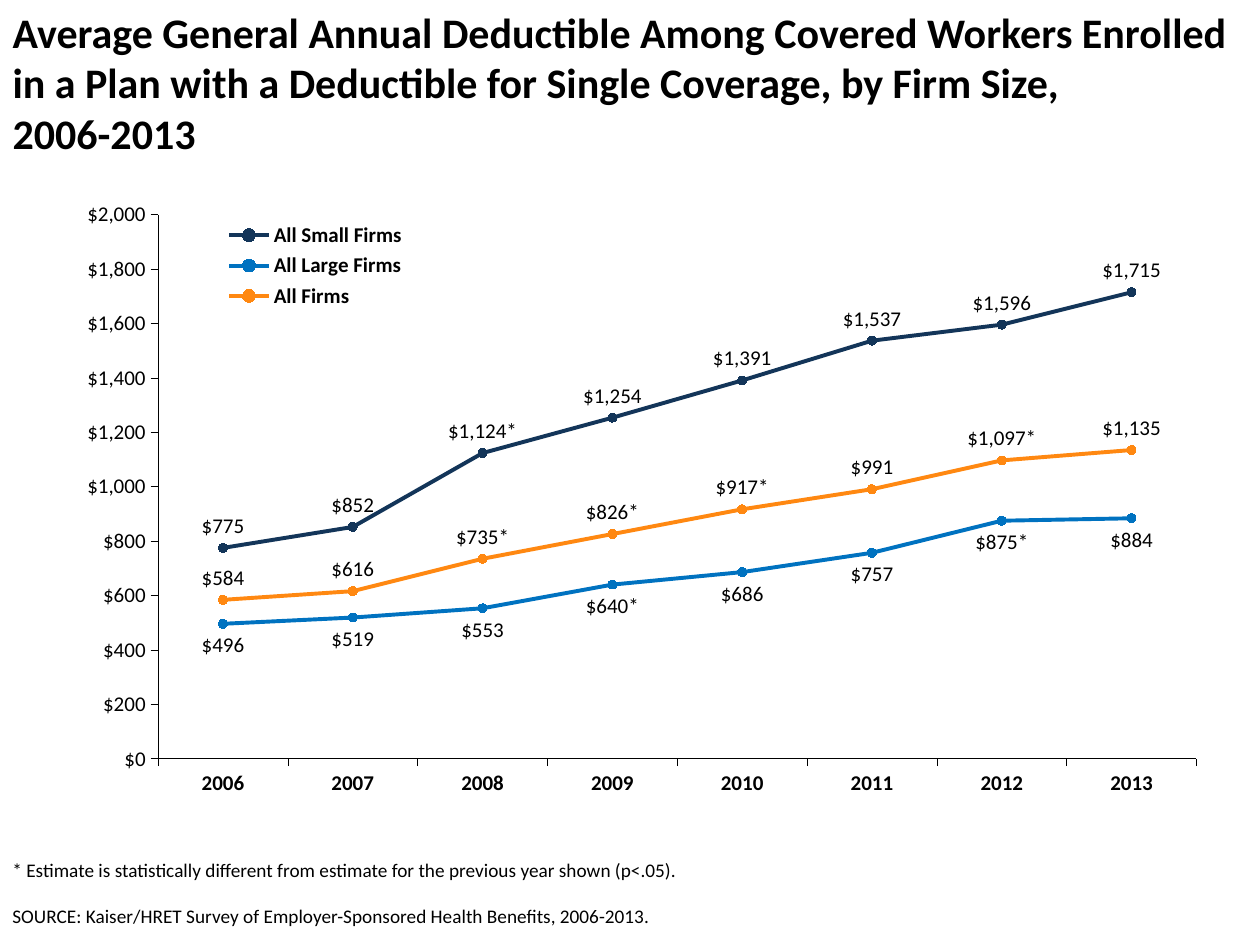
from lxml.etree import SubElement
from pptx import Presentation
from pptx.chart.data import CategoryChartData
from pptx.dml.color import RGBColor
from pptx.enum.chart import (XL_CHART_TYPE, XL_LABEL_POSITION as LabelPos,
                             XL_LEGEND_POSITION, XL_MARKER_STYLE, XL_TICK_MARK)
from pptx.enum.text import MSO_ANCHOR, MSO_AUTO_SIZE, PP_ALIGN
from pptx.oxml.ns import qn
from pptx.util import Inches, Pt

TITLE = ["Average General Annual Deductible Among Covered Workers Enrolled "
         "in a Plan with a Deductible for Single Coverage, by Firm Size,",
         "2006-2013"]
NOTES = ["* Estimate is statistically different from estimate for the previous year shown (p<.05).",
         "SOURCE: Kaiser/HRET Survey of Employer-Sponsored Health Benefits, 2006-2013."]
YEARS = [str(year) for year in range(2006, 2014)]
FIRMS = [
    dict(name="All Small Firms", color="133559", labels=LabelPos.ABOVE, starred=["2008"],
         deductibles=[775, 852, 1124, 1254, 1391, 1537, 1596, 1715]),
    dict(name="All Large Firms", color="0072C0", labels=LabelPos.BELOW, starred=["2009", "2012"],
         deductibles=[496, 519, 553, 640, 686, 757, 875, 884]),
    dict(name="All Firms", color="FF8811", labels=LabelPos.ABOVE,
         starred=["2008", "2009", "2010", "2012"],
         deductibles=[584, 616, 735, 826, 917, 991, 1097, 1135]),
]
THEME = dict(font="Calibri", ink="000000", title=24, chart=12, note=11,
             series_line=2.25, axis_line=0.3, marker=5)
DOLLARS = '"$"#,##0'


def style_font(font, size, bold=False):
    font.name, font.size, font.bold = THEME["font"], Pt(size), bold
    font.color.rgb = RGBColor.from_string(THEME["ink"])


def write_paragraphs(frame, lines, size, bold=False, gap=0):
    frame.word_wrap = True
    frame.auto_size = MSO_AUTO_SIZE.NONE
    frame.vertical_anchor = MSO_ANCHOR.TOP
    for i, line in enumerate(lines):
        paragraph = frame.add_paragraph() if i else frame.paragraphs[0]
        paragraph.text = line
        paragraph.alignment = PP_ALIGN.LEFT
        paragraph.space_before = Pt(gap if i else 0)
        style_font(paragraph.font, size, bold)


def place_part(part, index, settings):
    """Give a chart part a manual layout, as its child at the given index."""
    for old in part.findall(qn("c:layout")):
        part.remove(old)
    layout = SubElement(part, qn("c:layout"))
    part.insert(index, layout)
    manual = SubElement(layout, qn("c:manualLayout"))
    for tag, value in settings.items():
        SubElement(manual, qn(f"c:{tag}")).set("val", str(value))


def style_axis(axis, bold=False):
    axis.has_major_gridlines = False
    axis.major_tick_mark = XL_TICK_MARK.OUTSIDE
    axis.minor_tick_mark = XL_TICK_MARK.NONE
    axis.format.line.width = Pt(THEME["axis_line"])
    axis.format.line.color.rgb = RGBColor.from_string(THEME["ink"])
    style_font(axis.tick_labels.font, THEME["chart"], bold)


def style_series(series, firm):
    color = RGBColor.from_string(firm["color"])
    series.smooth = False
    series.format.line.color.rgb = color
    series.format.line.width = Pt(THEME["series_line"])
    marker = series.marker
    marker.style, marker.size = XL_MARKER_STYLE.CIRCLE, THEME["marker"]
    marker.format.fill.solid()
    marker.format.fill.fore_color.rgb = color
    marker.format.line.color.rgb = color

    labels = series.data_labels
    labels.show_value = True
    labels.position = firm["labels"]
    labels.number_format, labels.number_format_is_linked = DOLLARS, False
    style_font(labels.font, THEME["chart"])
    for year in firm["starred"]:
        i = YEARS.index(year)
        label = series.points[i].data_label
        paragraph = label.text_frame.paragraphs[0]
        run = paragraph.add_run()
        run.text = f"${firm['deductibles'][i]:,}*"
        style_font(run.font, THEME["chart"])
        label.position = firm["labels"]


def add_deductible_chart(slide):
    data = CategoryChartData(number_format=DOLLARS)
    data.categories = YEARS
    for firm in FIRMS:
        data.add_series(firm["name"], firm["deductibles"])
    chart = slide.shapes.add_chart(XL_CHART_TYPE.LINE_MARKERS, Inches(0.33), Inches(1.47),
                                   Inches(9.25), Inches(5.11), data).chart
    chart.has_title = False
    style_font(chart.font, THEME["chart"])
    chart.plots[0].vary_by_categories = False

    style_axis(chart.category_axis, bold=True)
    values = chart.value_axis
    style_axis(values)
    values.minimum_scale, values.maximum_scale, values.major_unit = 0, 2000, 200
    values.tick_labels.number_format = DOLLARS
    values.tick_labels.number_format_is_linked = False
    for series, firm in zip(chart.plots[0].series, FIRMS):
        style_series(series, firm)

    chart.has_legend = True
    legend = chart.legend
    legend.position = XL_LEGEND_POSITION.RIGHT
    legend.include_in_layout = False
    style_font(legend.font, THEME["chart"], bold=True)
    edges = dict(xMode="edge", yMode="edge")
    place_part(legend._element, 1, dict(edges, x=0.15, y=0.05, w=0.17, h=0.15))
    plot_area = chart._chartSpace.chart.plotArea
    place_part(plot_area, 0, dict(layoutTarget="inner", **edges, x=0.1, y=0.046, w=0.891, h=0.845))


def main():
    deck = Presentation()
    deck.slide_width, deck.slide_height = Inches(10), Inches(7.5)
    slide = deck.slides.add_slide(deck.slide_layouts[5])
    add_deductible_chart(slide)

    title = slide.shapes.title
    title.left, title.top, title.width, title.height = 0, 0, Inches(10), Inches(1.31)
    write_paragraphs(title.text_frame, TITLE, THEME["title"], bold=True)

    notes = slide.shapes.add_textbox(0, Inches(6.76), Inches(9), Inches(0.66))
    write_paragraphs(notes.text_frame, NOTES, THEME["note"], gap=13)
    deck.save("out.pptx")


if __name__ == "__main__":
    main()
